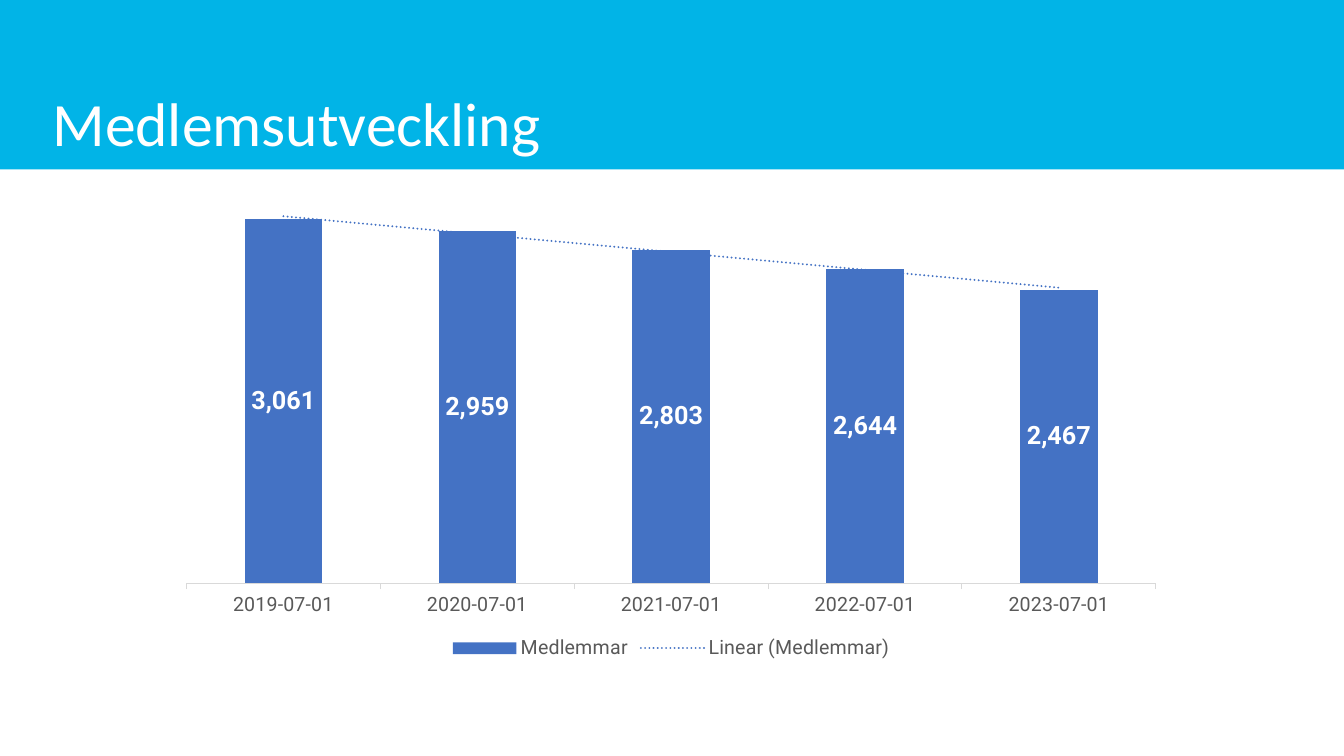
import pptx
import pptx.chart.data
import pptx.dml.color
import pptx.enum.chart
import pptx.enum.shapes
import pptx.enum.text
import pptx.oxml
import pptx.oxml.ns
import pptx.util
from dataclasses import dataclass

Cm = pptx.util.Cm
Pt = pptx.util.Pt
RGB = pptx.dml.color.RGBColor.from_string


@dataclass(frozen=True)
class Theme:
    """Colours, fonts and type sizes of the slide."""
    band: str = "01B4E7"
    light: str = "FFFFFF"
    bar: str = "4472C4"
    text: str = "595959"
    axis: str = "D9D9D9"
    title_font: str = "Calibri"
    chart_font: str = "Roboto"
    title_size: int = 44
    label_size: int = 18
    axis_size: int = 14


THEME = Theme()
MEMBERS = {
    "2019-07-01": 3061,
    "2020-07-01": 2959,
    "2021-07-01": 2803,
    "2022-07-01": 2644,
    "2023-07-01": 2467,
}


def set_font(font, name, size, color, bold=False):
    """Format a font."""
    font.name, font.size, font.bold = name, Pt(size), bold
    font.color.rgb = RGB(color)


def chart_xml(body):
    """Parse a chart element written with the c and a prefixes."""
    tag, rest = body.split(">", 1)
    return pptx.oxml.parse_xml(f"{tag} {pptx.oxml.ns.nsdecls('c', 'a')}>{rest}")


def add_header(s, text, left, top, width, height):
    """Draw the coloured band with the title at its foot."""
    band = s.shapes.add_shape(
        pptx.enum.shapes.MSO_SHAPE.RECTANGLE, left, top, width, height)
    band.shadow.inherit = False
    band.fill.solid()
    band.fill.fore_color.rgb = RGB(THEME.band)
    band.line.fill.background()

    title = s.shapes.title
    title._element.addprevious(band._element)
    indent = Cm(1.07)
    title.left, title.top = left + indent, top
    title.width, title.height = width - indent - Cm(0.85), height
    tf = title.text_frame
    tf.auto_size = pptx.enum.text.MSO_AUTO_SIZE.NONE
    tf.word_wrap = True
    tf.vertical_anchor = pptx.enum.text.MSO_ANCHOR.BOTTOM
    tf.margin_left = tf.margin_right = tf.margin_bottom = Cm(0.25)
    tf.margin_top = 0
    p = tf.paragraphs[0]
    p.alignment = pptx.enum.text.PP_ALIGN.LEFT
    p.line_spacing = 0.9
    r = p.add_run()
    r.text = text
    set_font(r.font, THEME.title_font, THEME.title_size, THEME.light)


def add_trend(series):
    """Add a dotted linear trend line to a series."""
    trend = chart_xml(
        f'<c:trendline><c:name>Linear ({series.name})</c:name>'
        f'<c:spPr><a:ln w="{Pt(1.5)}" cap="rnd"><a:solidFill>'
        f'<a:srgbClr val="{THEME.bar}"/></a:solidFill>'
        '<a:prstDash val="sysDot"/></a:ln></c:spPr>'
        '<c:trendlineType val="linear"/><c:dispRSqr val="0"/>'
        '<c:dispEq val="0"/></c:trendline>')
    series._element.find(pptx.oxml.ns.qn("c:cat")).addprevious(trend)


def set_plot_box(chart, x, y, w, h):
    """Fix the inner plot area as fractions of the chart."""
    area = chart._chartSpace.chart.plotArea
    for old in area.findall(pptx.oxml.ns.qn("c:layout")):
        area.remove(old)
    sizes = "".join(f'<c:{k} val="{v}"/>' for k, v in zip("xywh", (x, y, w, h)))
    area.insert(0, chart_xml(
        '<c:layout><c:manualLayout><c:layoutTarget val="inner"/>'
        '<c:xMode val="edge"/><c:yMode val="edge"/>'
        f'{sizes}</c:manualLayout></c:layout>'))


def add_member_chart(s, left, top, width, height):
    """Draw the yearly member columns with their trend."""
    data = pptx.chart.data.CategoryChartData(number_format="#,##0")
    data.categories = list(MEMBERS)
    data.add_series("Medlemmar", list(MEMBERS.values()))
    chart = s.shapes.add_chart(
        pptx.enum.chart.XL_CHART_TYPE.COLUMN_CLUSTERED,
        left, top, width, height, data).chart
    set_font(chart.font, THEME.chart_font, THEME.axis_size, THEME.text)
    chart.has_title = False
    chart.has_legend = True
    chart.legend.position = pptx.enum.chart.XL_LEGEND_POSITION.BOTTOM
    chart.legend.include_in_layout = False
    set_font(chart.legend.font, THEME.chart_font, THEME.axis_size, THEME.text)

    dates, counts = chart.category_axis, chart.value_axis
    dates.major_tick_mark = pptx.enum.chart.XL_TICK_MARK.OUTSIDE
    dates.format.line.color.rgb = RGB(THEME.axis)
    dates.format.line.width = Pt(0.75)
    set_font(dates.tick_labels.font, THEME.chart_font, THEME.axis_size, THEME.text)
    counts.visible = False
    counts.has_major_gridlines = False
    counts.minimum_scale, counts.maximum_scale = 0, 3500

    plot = chart.plots[0]
    plot.vary_by_categories = False
    plot.gap_width = 150
    series = plot.series[0]
    series.format.fill.solid()
    series.format.fill.fore_color.rgb = RGB(THEME.bar)
    labels = series.data_labels
    labels.show_value = True
    labels.position = pptx.enum.chart.XL_LABEL_POSITION.CENTER
    labels.number_format = "#,##0"
    labels.number_format_is_linked = False
    set_font(labels.font, THEME.chart_font, THEME.label_size, THEME.light, True)
    add_trend(series)
    set_plot_box(chart, 0.02, 0.02, 0.96, 0.82)


def main():
    """Build and save the slide."""
    prs = pptx.Presentation()
    prs.slide_width, prs.slide_height = Cm(33.87), Cm(19.05)
    s = prs.slides.add_slide(prs.slide_layouts[5])
    add_header(s, "Medlemsutveckling", 0, 0, prs.slide_width, Cm(4.27))
    add_member_chart(s, Cm(4.19), Cm(3.96), Cm(25.45), Cm(12.78))
    prs.save("out.pptx")


if __name__ == "__main__":
    main()
